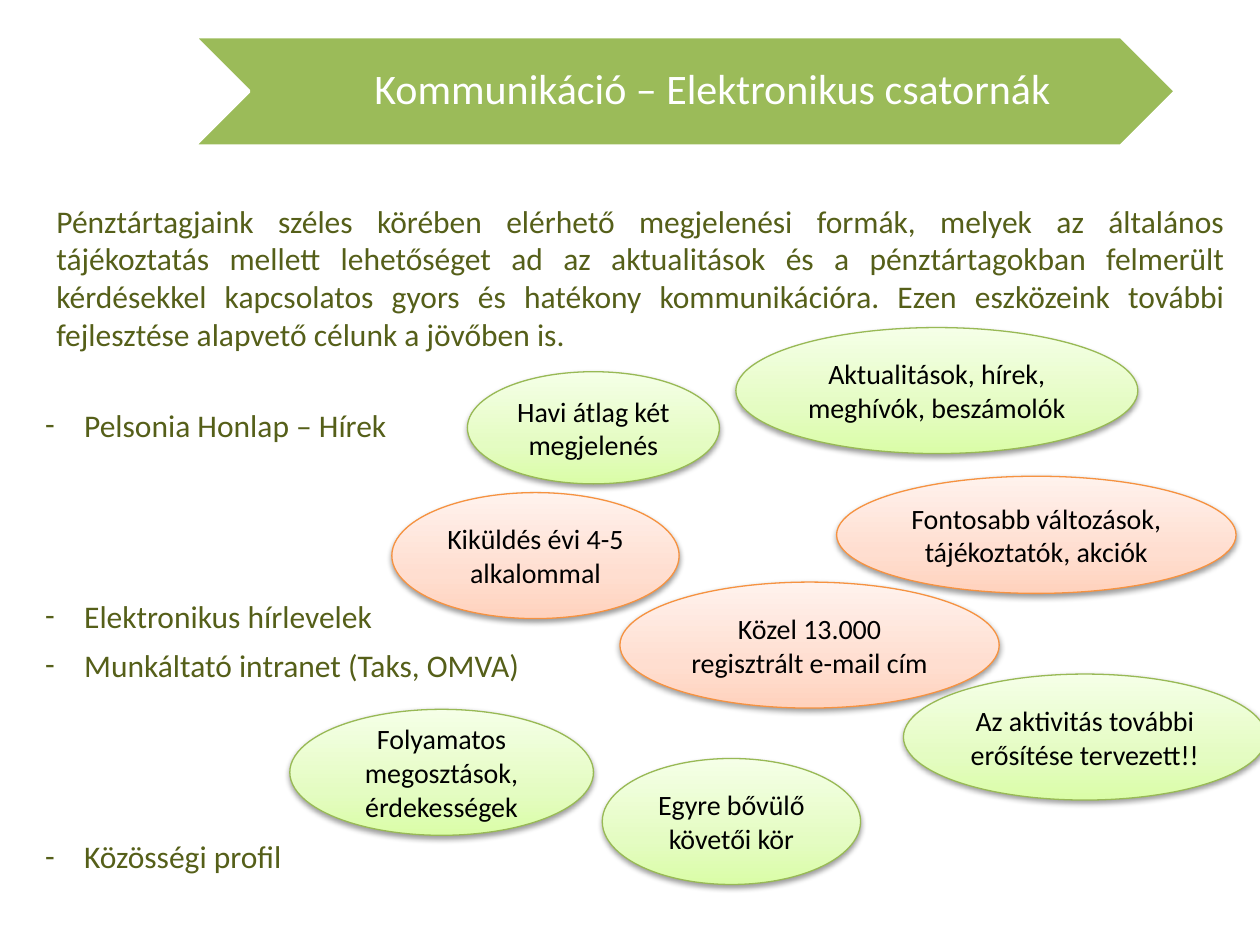
from pptx import Presentation
from pptx.dml.color import RGBColor
from pptx.enum.shapes import MSO_SHAPE
from pptx.enum.text import MSO_ANCHOR, PP_ALIGN
from pptx.oxml import parse_xml
from pptx.oxml.ns import nsdecls
from pptx.util import Inches, Pt

CHEVRON, ELLIPSE = MSO_SHAPE.CHEVRON, MSO_SHAPE.OVAL
MIDDLE = MSO_ANCHOR.MIDDLE
CENTER, JUSTIFY, LEFT = PP_ALIGN.CENTER, PP_ALIGN.JUSTIFY, PP_ALIGN.LEFT
OLIVE, WHITE, BLACK = "555F19", "FFFFFF", "000000"
GREEN = ("98B955", ("DAFDA7", "E4FCC2", "F5FFE7"))
ORANGE = ("F69240", ("FFD2BD", "FFDED0", "FFF2ED"))


def color(value):
    return RGBColor.from_string(value)


def write(paragraph, text, size=18, fill=OLIVE, align=LEFT, before=0, hanging=0, bullet=None):
    properties = paragraph._p.get_or_add_pPr()
    if hanging:
        properties.set("marL", str(Inches(hanging)))
        properties.set("indent", str(-Inches(hanging)))
    if bullet:
        properties.append(parse_xml(f'<a:buFont {nsdecls("a")} typeface="Calibri"/>'))
        properties.append(parse_xml(f'<a:buChar {nsdecls("a")} char="{bullet}"/>'))
    paragraph.alignment = align
    paragraph.space_before = Pt(before)
    run = paragraph.add_run()
    run.text = text
    run.font.name = "Calibri"
    run.font.size = Pt(size)
    run.font.color.rgb = color(fill)


presentation = Presentation()
presentation.slide_width = Inches(10)
presentation.slide_height = Inches(7.5)
slide = presentation.slides.add_slide(presentation.slide_layouts[6])
shapes = slide.shapes

banner = shapes.add_shape(CHEVRON, Inches(1.54), Inches(0.29), Inches(7.79), Inches(0.87))
banner.shadow.inherit = False
banner.fill.solid()
banner.fill.fore_color.rgb = color("9BBB59")
banner.line.color.rgb = color(WHITE)
banner.line.width = Pt(2)

title = shapes.add_textbox(Inches(1.97), Inches(0.29), Inches(6.92), Inches(0.87))
frame = title.text_frame
frame.word_wrap = True
frame.vertical_anchor = MIDDLE
frame.margin_right = frame.margin_top = frame.margin_bottom = Inches(0.04)
paragraph = frame.paragraphs[0]
paragraph._p.get_or_add_pPr().set("marL", str(Inches(0.39)))
paragraph.line_spacing = 0.9
write(paragraph, "Kommunikáció – Elektronikus csatornák", size=24, fill=WHITE, align=CENTER)

intro = shapes.add_textbox(Inches(0.35), Inches(1.55), Inches(9.47), Inches(1.31))
intro.text_frame.word_wrap = True
write(
    intro.text_frame.paragraphs[0],
    "Pénztártagjaink széles körében elérhető megjelenési formák, melyek az általános "
    "tájékoztatás mellett lehetőséget ad az aktualitások és a pénztártagokban felmerült "
    "kérdésekkel kapcsolatos gyors és hatékony kommunikációra. Ezen eszközeink további "
    "fejlesztése alapvető célunk a jövőben is.",
    align=JUSTIFY,
)

channels = [
    ("Pelsonia Honlap – Hírek", 0),
    ("Elektronikus hírlevelek", 88),
    ("Munkáltató intranet (Taks, OMVA)", 6),
    ("Közösségi profil", 88),
]
channel_list = shapes.add_textbox(Inches(0.26), Inches(3.17), Inches(5.04), Inches(3.9))
frame = channel_list.text_frame
frame.word_wrap = True
for index, (text, before) in enumerate(channels):
    paragraph = frame.add_paragraph() if index else frame.paragraphs[0]
    write(paragraph, text, before=before, hanging=0.31, bullet="-")

bubbles = [
    (3.71, 2.95, 2, 0.89, GREEN, "Havi átlag két megjelenés"),
    (4.92, 4.62, 3.01, 1, ORANGE, "Közel 13.000 regisztrált e-mail cím"),
    (5.84, 2.6, 3.19, 1, GREEN, "Aktualitások, hírek, meghívók, beszámolók"),
    (2.3, 5.63, 2.41, 1, GREEN, "Folyamatos megosztások, érdekességek"),
    (4.78, 6.02, 2.05, 1, GREEN, "Egyre bővülő követői kör"),
    (6.64, 3.78, 3.17, 0.93, ORANGE, "Fontosabb változások, tájékoztatók, akciók"),
    (7.17, 5.35, 2.88, 1, GREEN, "Az aktivitás további erősítése tervezett!!"),
    (3.11, 3.91, 2.28, 1, ORANGE, "Kiküldés évi 4-5 alkalommal"),
]
for left, top, width, height, (outline, tints), text in bubbles:
    bubble = shapes.add_shape(ELLIPSE, Inches(left), Inches(top), Inches(width), Inches(height))
    stops = "".join(
        f'<a:gs pos="{position}"><a:srgbClr val="{tint}"/></a:gs>'
        for position, tint in zip((0, 35000, 100000), tints)
    )
    properties = bubble._element.spPr
    properties.append(parse_xml(
        f'<a:gradFill {nsdecls("a")} rotWithShape="1"><a:gsLst>{stops}</a:gsLst>'
        '<a:lin ang="16200000" scaled="0"/></a:gradFill>'
    ))
    bubble.line.color.rgb = color(outline)
    bubble.line.width = Pt(0.75)
    properties.append(parse_xml(
        f'<a:effectLst {nsdecls("a")}><a:outerShdw blurRad="40000" dist="20000" dir="5400000" '
        f'rotWithShape="0"><a:srgbClr val="{BLACK}"><a:alpha val="38000"/></a:srgbClr>'
        '</a:outerShdw></a:effectLst>'
    ))
    frame = bubble.text_frame
    frame.word_wrap = True
    frame.vertical_anchor = MIDDLE
    write(frame.paragraphs[0], text, size=16, fill=BLACK, align=CENTER)

presentation.save("out.pptx")
